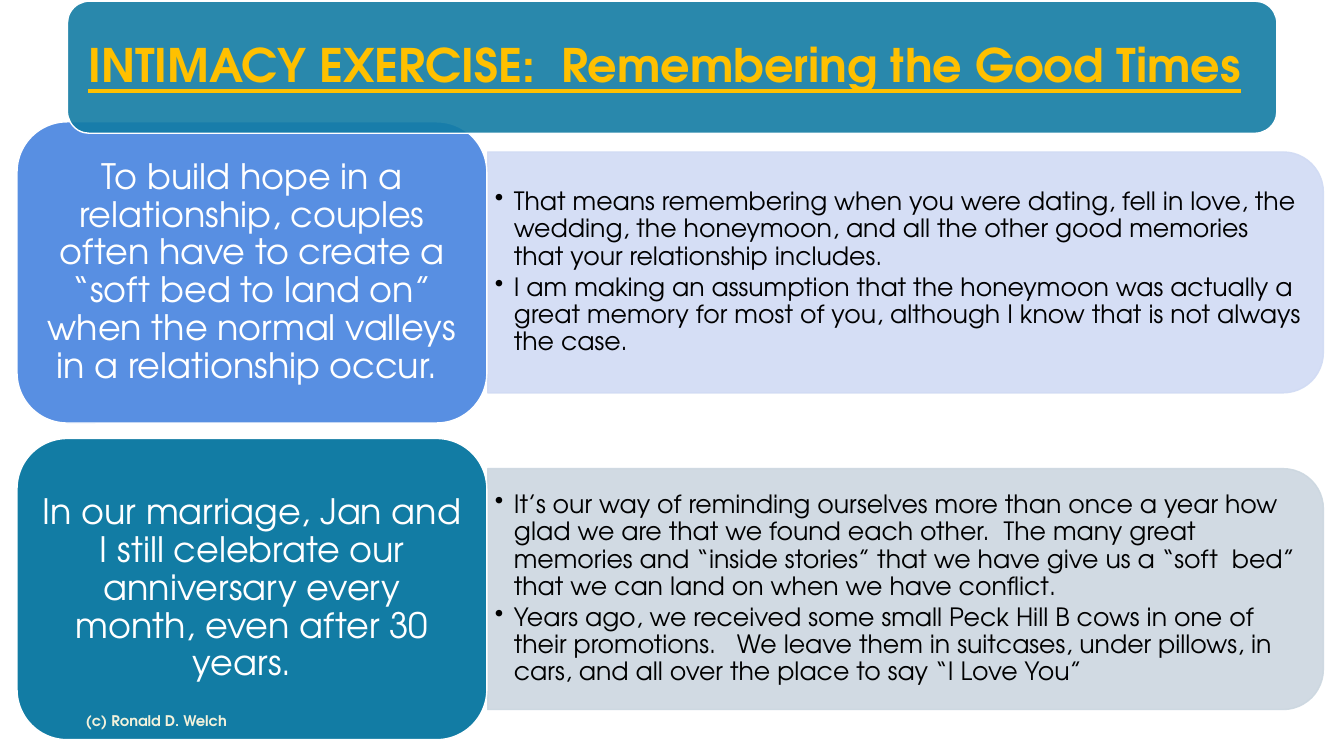
from lxml import etree
from pptx import Presentation
from pptx.dml.color import RGBColor
from pptx.enum.shapes import MSO_SHAPE
from pptx.enum.text import MSO_ANCHOR, PP_ALIGN
from pptx.oxml.ns import qn
from pptx.util import Cm, Pt

ROUND = MSO_SHAPE.ROUNDED_RECTANGLE
HALF = MSO_SHAPE.ROUND_2_SAME_RECTANGLE
MIDDLE = MSO_ANCHOR.MIDDLE
LEFT, CENTER = PP_ALIGN.LEFT, PP_ALIGN.CENTER
FONT = "TeX Gyre Adventor"

TITLE = "INTIMACY EXERCISE:  Remembering the Good Times"
FOOTER = "(c) Ronald D. Welch"
ROWS = [
    ("588FE2", "D1DBF4",
     "To build hope in a relationship, couples often have to create a “soft bed to land on” when the normal valleys in a relationship occur. ",
     ["That means remembering when you were dating, fell in love, the wedding, the honeymoon, and all the other good memories that your relationship includes.",
      "I am making an assumption that the honeymoon was actually a great memory for most of you, although I know that is not always the case."]),
    ("127CA4", "CCD7E0",
     "In our marriage, Jan and I still celebrate our anniversary every month, even after 30 years.  ",
     ["It’s our way of reminding ourselves more than once a year how glad we are that we found each other.  The many great memories and “inside stories” that we have give us a “soft  bed” that we can land on when we have conflict.",
      "Years ago, we received some small Peck Hill B cows in one of their promotions.   We leave them in suitcases, under pillows, in cars, and all over the place to say “I Love You”"]),
]

CARD_X, CARD_Y, CARD_W, CARD_H = 0.43, 3.07, 11.84, 7.59
PITCH = 7.98
PANEL_X, PANEL_W, PANEL_H = 12.29, 21.06, 6.07
TEXT_W, TEXT_H = 20.78, 5.49


def color(code):
    return RGBColor.from_string(code)


def fade(fmt):
    node = fmt._xPr.find(".//" + qn("a:srgbClr"))
    etree.SubElement(node, qn("a:alpha"), val="90000")


def block(kind, x, y, w, h, fill, line, clear=False):
    shape = slide.shapes.add_shape(kind, Cm(x), Cm(y), Cm(w), Cm(h))
    shape.shadow.inherit = False
    shape.fill.solid()
    shape.fill.fore_color.rgb = color(fill)
    shape.line.color.rgb = color(line)
    shape.line.width = Pt(1)
    if clear:
        fade(shape.fill)
    return shape


def write(shape, texts, size, code, pad=(0.25, 0.13), align=LEFT,
          bold=False, under=False, bullet=False, lead=0.9):
    frame = shape.text_frame
    frame.word_wrap = True
    frame.vertical_anchor = MIDDLE
    frame.margin_left = frame.margin_right = Cm(pad[0])
    frame.margin_top = frame.margin_bottom = Cm(pad[1])
    for i, text in enumerate(texts):
        para = frame.add_paragraph() if i else frame.paragraphs[0]
        para.text = text
        if bullet:
            props = para._p.get_or_add_pPr()
            props.set("marL", str(Cm(0.48)))
            props.set("indent", str(-Cm(0.48)))
            etree.SubElement(props, qn("a:buChar"), char="•")
            para.space_after = Pt(2.7)
        para.alignment = align
        para.line_spacing = lead
        font = para.font
        font.name, font.size = FONT, Pt(size)
        font.bold, font.underline = bold, under
        font.color.rgb = color(code)


def box(x, y, w, h):
    return slide.shapes.add_textbox(Cm(x), Cm(y), Cm(w), Cm(h))


deck = Presentation()
deck.slide_width, deck.slide_height = Cm(33.87), Cm(19.05)
slide = deck.slides.add_slide(deck.slide_layouts[6])

for i, (dark, pale, lead, notes) in enumerate(ROWS):
    top = CARD_Y + i * PITCH
    mid = top + CARD_H / 2
    panel = block(HALF, PANEL_X + (PANEL_W - PANEL_H) / 2, mid - PANEL_W / 2,
                  PANEL_H, PANEL_W, pale, pale, True)
    fade(panel.line.fill)
    panel.rotation = 90
    write(box(PANEL_X, mid - TEXT_H / 2, TEXT_W, TEXT_H), notes, 18, "000000",
          (0.18, 0.1), bullet=True)
    card = block(ROUND, CARD_X, top, CARD_W, CARD_H, dark, "FFFFFF")
    write(card, [lead], 25, "FFFFFF", align=CENTER)

write(box(1.91, 17.65, 21.59, 1.02), [FOOTER], 10.5, "F3F2DC", bold=True, lead=1.0)
banner = block(ROUND, 1.7, 0.03, 30.48, 3.33, "127CA4", "FFFFFF", True)
write(banner, [TITLE], 33, "FFC000", (0.36, 0.36), bold=True, under=True)

deck.save("out.pptx")
